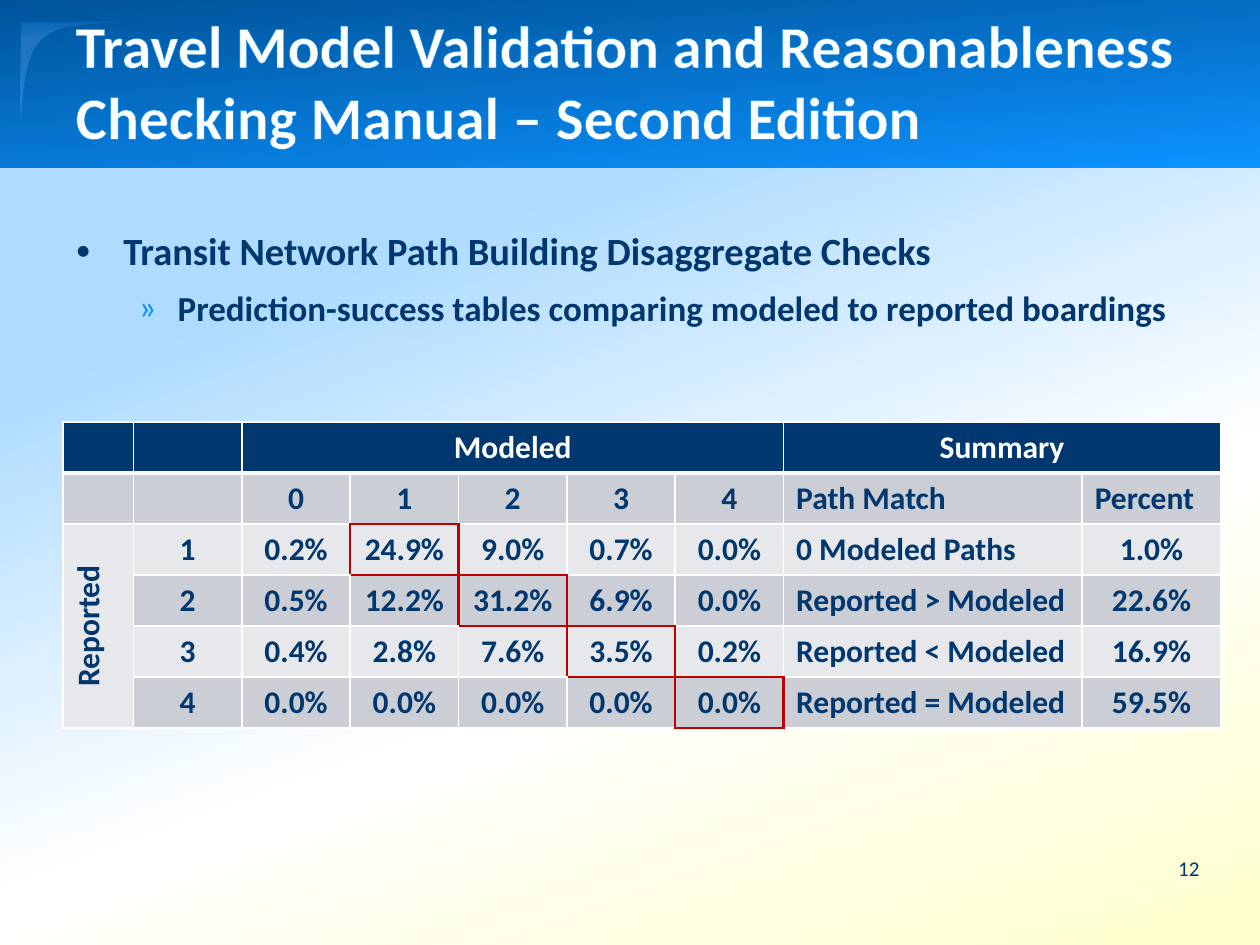
from lxml.etree import SubElement
from pptx import Presentation
from pptx.dml.color import RGBColor
from pptx.enum.shapes import MSO_SHAPE
from pptx.enum.text import MSO_ANCHOR, MSO_AUTO_SIZE, PP_ALIGN
from pptx.oxml.ns import qn
from pptx.util import Inches, Pt

NAVY, BLUE, WHITE, RED = "00376F", "0C92FF", "FFFFFF", "C00000"
DARK_BAND, LIGHT_BAND = "CCCED5", "E7E8EB"

TITLE_FONT = {"name": "Calibri", "size": Pt(34), "bold": True}
BULLET_FONT = {"name": "Calibri", "size": Pt(22), "bold": True}
SUB_FONT = {"name": "Calibri", "size": Pt(20), "bold": True}
TABLE_FONT = {"name": "Calibri", "size": Pt(18), "bold": True}
NUMBER_FONT = {"name": "Calibri", "size": Pt(12), "bold": False}

COLUMN_WIDTHS = [0.56] + [0.86] * 6 + [2.37, 1.1]
ROWS = [
    ["", "", "Modeled", "", "", "", "", "Summary", ""],
    ["", "", "0", "1", "2", "3", "4", "Path Match", "Percent"],
    ["Reported", "1", "0.2%", "24.9%", "9.0%", "0.7%", "0.0%", "0 Modeled Paths", "1.0%"],
    ["", "2", "0.5%", "12.2%", "31.2%", "6.9%", "0.0%", "Reported > Modeled", "22.6%"],
    ["", "3", "0.4%", "2.8%", "7.6%", "3.5%", "0.2%", "Reported < Modeled", "16.9%"],
    ["", "4", "0.0%", "0.0%", "0.0%", "0.0%", "0.0%", "Reported = Modeled", "59.5%"],
]
MERGES = [((0, 2), (0, 6)), ((0, 7), (0, 8)), ((2, 0), (5, 0))]


def rgb(color):
    return RGBColor.from_string(color)


def place(shape, left, top, width, height):
    box = {"left": left, "top": top, "width": width, "height": height}
    for side, length in box.items():
        setattr(shape, side, Inches(length))


def write(paragraph, text, style, color):
    run = paragraph.add_run()
    run.text = text
    for attribute, value in style.items():
        setattr(run.font, attribute, value)
    run.font.color.rgb = rgb(color)
    return run


def set_gradient(fill, element, stops, angle):
    """Stops are (position %, colour, opacity %); the angle runs clockwise."""
    fill.gradient()
    gradient = next(element.iter(qn("a:gradFill")))
    for child in list(gradient):
        gradient.remove(child)
    stop_list = SubElement(gradient, qn("a:gsLst"))
    for position, color, opacity in stops:
        stop = SubElement(stop_list, qn("a:gs"), pos=str(position * 1000))
        tone = SubElement(stop, qn("a:srgbClr"), val=color)
        if opacity < 100:
            SubElement(tone, qn("a:alpha"), val=str(opacity * 1000))
    SubElement(gradient, qn("a:lin"), ang=str(angle * 60000), scaled="0")


def decorate(slide, shape, depth, stops, angle):
    """Style a header ornament and put it behind the text."""
    set_gradient(shape.fill, shape._element, stops, angle)
    shape.line.fill.background()
    shape.shadow.inherit = False
    slide.shapes._spTree.insert(2 + depth, shape._element)


def curve(start, control_1, control_2, end, steps=16):
    """Points along a cubic curve."""
    for step in range(steps + 1):
        t = step / steps
        weights = ((1 - t) ** 3, 3 * t * (1 - t) ** 2, 3 * t * t * (1 - t), t ** 3)
        corners = (start, control_1, control_2, end)
        yield tuple(Inches(sum(w * p[axis] for w, p in zip(weights, corners)))
                    for axis in (0, 1))


def add_header(slide):
    band = slide.shapes.add_shape(MSO_SHAPE.RECTANGLE, 0, 0, Inches(10), Inches(1.33))
    decorate(slide, band, 0, [(0, "00549A", 100), (100, BLUE, 100)], 85)

    # Curved glint in the top left corner
    middle, right, bottom = (0.33, 0.32), (0.98, 0.18), (0.17, 0.98)
    outline = [
        *curve(middle, (0.47, 0.19), (0.7, 0.2), right),
        *curve((0.17, 0.18), (0.17, 0.44), (0.16, 0.78), bottom),
        *curve(bottom, (0.19, 0.72), (0.2, 0.45), middle),
    ]
    builder = slide.shapes.build_freeform(*outline[0])
    builder.add_line_segments(outline[1:], close=True)
    glint = builder.convert_to_shape()
    decorate(slide, glint, 1, [(0, "299EFF", 22), (15, "7DC4FF", 23)], 90)


def add_title(slide, text):
    title = slide.shapes.title
    place(title, 0.5, 0.17, 9.35, 1.08)
    frame = title.text_frame
    frame.auto_size = MSO_AUTO_SIZE.NONE
    frame.vertical_anchor = MSO_ANCHOR.BOTTOM
    frame.paragraphs[0].alignment = PP_ALIGN.LEFT
    run = write(frame.paragraphs[0], text, TITLE_FONT, WHITE)
    # The letter outline comes before the fill in the run properties
    properties = run._r.get_or_add_rPr()
    outline = SubElement(properties, qn("a:ln"), w=str(Pt(0.75)))
    SubElement(SubElement(outline, qn("a:solidFill")), qn("a:srgbClr"), val=BLUE)
    properties.insert(0, outline)


def add_bullet(paragraph, text, style, level, mark, mark_color, mark_size, margin, indent, before):
    paragraph.level = level
    paragraph.space_before = Pt(before)
    properties = paragraph._p.get_or_add_pPr()
    properties.set("marL", str(Inches(margin)))
    properties.set("indent", str(Inches(indent)))
    SubElement(SubElement(properties, qn("a:buClr")), qn("a:srgbClr"), val=mark_color)
    SubElement(properties, qn("a:buSzPct"), val=str(mark_size * 1000))
    SubElement(properties, qn("a:buFont"), typeface="Calibri")
    SubElement(properties, qn("a:buChar"), char=mark)
    write(paragraph, text, style, NAVY)


def add_body(slide):
    body = slide.placeholders[1]
    place(body, 0.5, 1.75, 9, 1.42)
    frame = body.text_frame
    frame.auto_size = MSO_AUTO_SIZE.NONE
    add_bullet(frame.paragraphs[0], "Transit Network Path Building Disaggregate Checks",
               BULLET_FONT, 0, "•", NAVY, 80, 0.38, -0.38, 0)
    add_bullet(frame.add_paragraph(),
               "Prediction-success tables comparing modeled to reported boardings",
               SUB_FONT, 1, "»", BLUE, 100, 0.81, -0.31, 8)


def add_page_number(slide, text):
    number = slide.shapes.add_textbox(Inches(9.17), Inches(6.69), Inches(0.53), Inches(0.4))
    frame = number.text_frame
    frame.word_wrap = True
    frame.vertical_anchor = MSO_ANCHOR.MIDDLE
    frame.paragraphs[0].alignment = PP_ALIGN.CENTER
    write(frame.paragraphs[0], text, NUMBER_FONT, NAVY)


def is_match(row, column):
    """Cells where the reported and modeled boardings agree."""
    return 2 <= row <= 5 and column == row + 1


def set_borders(cell, row, column):
    properties = cell._tc.get_or_add_tcPr()
    neighbours = {"L": (0, -1), "R": (0, 1), "T": (-1, 0), "B": (1, 0)}
    for side, (down, across) in neighbours.items():
        color, width = WHITE, 1
        if is_match(row, column) or is_match(row + down, column + across):
            color, width = RED, 1.5
        elif (row, side) in ((0, "B"), (1, "T")):
            width = 3
        line = SubElement(properties, qn(f"a:ln{side}"), w=str(Pt(width)))
        SubElement(SubElement(line, qn("a:solidFill")), qn("a:srgbClr"), val=color)


def format_cell(cell, row, column, text):
    set_borders(cell, row, column)
    band = NAVY if row == 0 else DARK_BAND if row % 2 else LIGHT_BAND
    cell.fill.solid()
    cell.fill.fore_color.rgb = rgb(band)
    cell.vertical_anchor = MSO_ANCHOR.MIDDLE
    if row > 0 and 1 <= column <= 6:
        for margin in ("margin_left", "margin_right", "margin_top", "margin_bottom"):
            setattr(cell, margin, Inches(0.05))
    if text:
        is_label = row > 0 and (column == 7 or (row, column) == (1, 8))
        paragraph = cell.text_frame.paragraphs[0]
        paragraph.alignment = PP_ALIGN.LEFT if is_label else PP_ALIGN.CENTER
        write(paragraph, text, TABLE_FONT, WHITE if row == 0 else NAVY)


def add_boardings_table(slide):
    table = slide.shapes.add_table(len(ROWS), len(COLUMN_WIDTHS), Inches(0.5), Inches(3.35),
                                   Inches(9.2), Inches(2.43)).table
    table.first_row = table.horz_banding = False
    for column, width in zip(table.columns, COLUMN_WIDTHS):
        column.width = Inches(width)
    for first, last in MERGES:
        table.cell(*first).merge(table.cell(*last))
    for row, texts in enumerate(ROWS):
        for column, text in enumerate(texts):
            format_cell(table.cell(row, column), row, column, text)
    table.cell(2, 0)._tc.get_or_add_tcPr().set("vert", "vert270")


def main():
    deck = Presentation()
    deck.slide_width, deck.slide_height = Inches(10), Inches(7.5)
    slide = deck.slides.add_slide(deck.slide_layouts[1])
    set_gradient(slide.background.fill, slide._element,
                 [(28, "AEDBFF", 100), (64, WHITE, 100), (100, "FFFFCC", 100)], 70)
    add_header(slide)
    add_title(slide, "Travel Model Validation and Reasonableness Checking Manual – Second Edition")
    add_body(slide)
    add_page_number(slide, "12")
    add_boardings_table(slide)
    deck.save("out.pptx")


if __name__ == "__main__":
    main()
